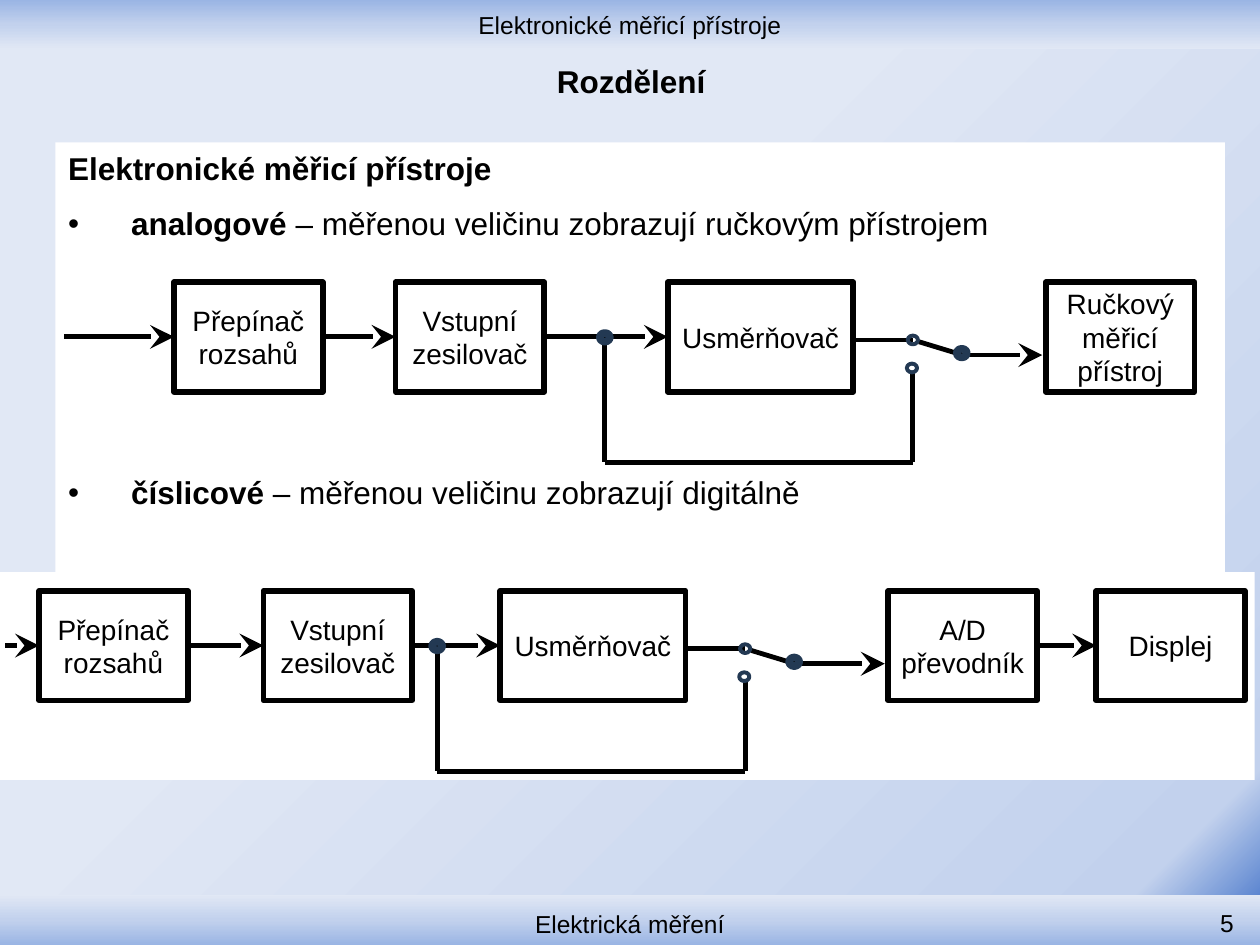
from lxml.etree import SubElement
from pptx import Presentation
from pptx.dml.color import RGBColor
from pptx.enum.shapes import MSO_CONNECTOR, MSO_SHAPE
from pptx.enum.text import MSO_ANCHOR, MSO_AUTO_SIZE, PP_ALIGN
from pptx.oxml.ns import qn
from pptx.util import Pt

BLACK, WHITE, NAVY = "000000", "FFFFFF", "233953"
BAR = [(0, "9AB5E4"), (50, "C2D1ED"), (100, "E1E8F5")]
GLOW = [(0, "3468C5"), (8, "C2D1ED"), (60, "E1E8F5"), (100, "E1E8F5")]
RECT = "Usměrňovač"


def color(code):
    return RGBColor.from_string(code)


def sub(parent, tag, **attrs):
    return SubElement(parent, qn(tag), **attrs)


def shade(fill, root, stops, angle=None):
    """Gradient with given stops: linear by angle, else from the lower right."""
    fill.gradient()
    grad = next(root.iter(qn("a:gradFill")))
    for child in list(grad):
        grad.remove(child)
    items = sub(grad, "a:gsLst")
    for pos, code in stops:
        sub(sub(items, "a:gs", pos=str(pos * 1000)), "a:srgbClr", val=code)
    if angle is None:
        ring = sub(grad, "a:path", path="circle")
        sub(ring, "a:fillToRect", l="100000", t="100000")
    else:
        sub(grad, "a:lin", ang=str(angle * 60000), scaled="0")


def write(frame, text, size=14, bold=False, align=PP_ALIGN.CENTER,
          anchor=MSO_ANCHOR.MIDDLE, inset=7.2, para=None):
    """Add one run of text, to the first paragraph unless one is given."""
    frame.word_wrap = True
    frame.auto_size = MSO_AUTO_SIZE.NONE
    frame.vertical_anchor = anchor
    frame.margin_left = frame.margin_right = Pt(inset)
    frame.margin_top = frame.margin_bottom = Pt(3.6)
    para = para or frame.paragraphs[0]
    para.alignment = align
    run = para.add_run()
    run.text = text
    font = run.font
    font.name, font.size, font.bold = "Arial", Pt(size), bold
    font.color.rgb = color(BLACK)


def place(shape, x, y, w, h):
    shape.left, shape.top, shape.width, shape.height = map(Pt, (x, y, w, h))


def draw(slide, x, y, w, h, kind=MSO_SHAPE.RECTANGLE, fill=None, line=None, width=1):
    shape = slide.shapes.add_shape(kind, Pt(x), Pt(y), Pt(w), Pt(h))
    shape.shadow.inherit = False
    if fill:
        shape.fill.solid()
        shape.fill.fore_color.rgb = color(fill)
    else:
        shape.fill.background()
    if line:
        shape.line.color.rgb = color(line)
        shape.line.width = Pt(width)
    else:
        shape.line.fill.background()
    return shape


def wire(slide, x1, y1, x2, y2, arrow=False):
    link = slide.shapes.add_connector(
        MSO_CONNECTOR.STRAIGHT, Pt(x1), Pt(y1), Pt(x2), Pt(y2))
    link.line.color.rgb = color(BLACK)
    link.line.width = Pt(2.75)
    if arrow:
        sub(link.line._get_or_add_ln(), "a:tailEnd", type="stealth", w="lg", len="lg")
    sub(link._element.spPr, "a:effectLst")


def dot(slide, x, y, width):
    draw(slide, x - 2.9, y - 2.5, 5.8, 5, MSO_SHAPE.OVAL, line=NAVY, width=width)


def bypass(slide, x, y, w, end):
    """Loop round the rectifier at x, y and the switch leading on to end."""
    node, pole, arm = x - 36, x + w + 34, x + w + 62.5
    top, low, base = y + 33, y + 50, y + 103
    wire(slide, node, top - 1, node, base)
    wire(slide, node, base, pole, base)
    wire(slide, pole, low + 2, pole, base)
    wire(slide, x + w, top, pole, top)
    wire(slide, arm, top + 8.6, end - 2, top + 8.6, arrow=True)
    wire(slide, pole + 3.5, top + 1, arm, top + 8.6)
    dot(slide, arm - 0.5, top + 7.5, 4.33)
    dot(slide, node, top - 1.5, 4.33)
    dot(slide, pole, top, 2.25)
    dot(slide, pole - 0.5, low - 1, 2.25)


def chain(slide, start, y, parts):
    """Row of blocks joined by wires, with input from start."""
    last = None
    for x, label in parts:
        w = 106 if label == RECT else 85
        block = draw(slide, x, y, w, 62.6, line=BLACK, width=3.25)
        write(block.text_frame, label, size=16, inset=3)
        if last == RECT:
            bypass(slide, start - 106, y, 106, x)
        else:
            wire(slide, start, y + 31.2, x, y + 31.2, arrow=True)
        start, last = x + w, label


def bar(slide, x, y, w, h, text, angle, anchor):
    shape = draw(slide, x, y, w, h)
    shade(shape.fill, shape._element, BAR, angle)
    write(shape.text_frame, text, anchor=anchor)


def body(slide, x, y, w, h):
    shape = slide.placeholders[1]
    place(shape, x, y, w, h)
    shape.fill.solid()
    shape.fill.fore_color.rgb = color(WHITE)
    rows = [
        ("Elektronické měřicí přístroje", "", 0),
        ("analogové", " – měřenou veličinu zobrazují ručkovým přístrojem", 10.2),
        ("číslicové", " – měřenou veličinu zobrazují digitálně", 132),
    ]
    frame = shape.text_frame
    for i, (head, rest, gap) in enumerate(rows):
        para = frame.add_paragraph() if i else frame.paragraphs[0]
        para.space_before = Pt(gap)
        props = para._p.get_or_add_pPr()
        props.set("marL", str(Pt(36)))
        props.set("indent", str(-Pt(36)))
        if rest:
            sub(props, "a:buFont", typeface="Arial")
            sub(props, "a:buChar", char="•")
        else:
            sub(props, "a:buNone")
        for text, bold in ((head, True), (rest, False)):
            if text:
                write(frame, text, size=18, bold=bold, align=PP_ALIGN.LEFT,
                      anchor=MSO_ANCHOR.TOP, para=para)


def main():
    deck = Presentation()
    deck.slide_width, deck.slide_height = Pt(720), Pt(540)
    slide = deck.slides.add_slide(deck.slide_layouts[1])
    shade(slide.background.fill, slide._element, GLOW)

    # Title and list
    title = slide.shapes.title
    place(title, 36.7, 31.7, 648, 28.8)
    write(title.text_frame, "Rozdělení", size=18, bold=True)
    body(slide, 31.7, 81.4, 668.2, 257.8)
    draw(slide, 0, 326.9, 717, 118.8, fill=WHITE)

    # Header, footer and page number
    bar(slide, 0, 0, 720, 28.1, "Elektronické měřicí přístroje", 90, MSO_ANCHOR.MIDDLE)
    bar(slide, 0, 511.2, 720, 28.8, "Elektrická měření", 270, MSO_ANCHOR.BOTTOM)
    page = slide.shapes.add_textbox(Pt(671.8), Pt(510.5), Pt(40.3), Pt(28.8))
    write(page.text_frame, "5", align=PP_ALIGN.RIGHT, anchor=MSO_ANCHOR.BOTTOM)

    # Analogue and digital block diagrams
    chain(slide, 36.7, 161.3, [
        (99.4, "Přepínač rozsahů"), (226, "Vstupní zesilovač"),
        (381.6, RECT), (597.6, "Ručkový měřicí přístroj")])
    chain(slide, 3, 337.7, [
        (22.3, "Přepínač rozsahů"), (150.5, "Vstupní zesilovač"),
        (285.8, RECT), (507.6, "A/D převodník"), (626.4, "Displej")])
    deck.save("out.pptx")


if __name__ == "__main__":
    main()
